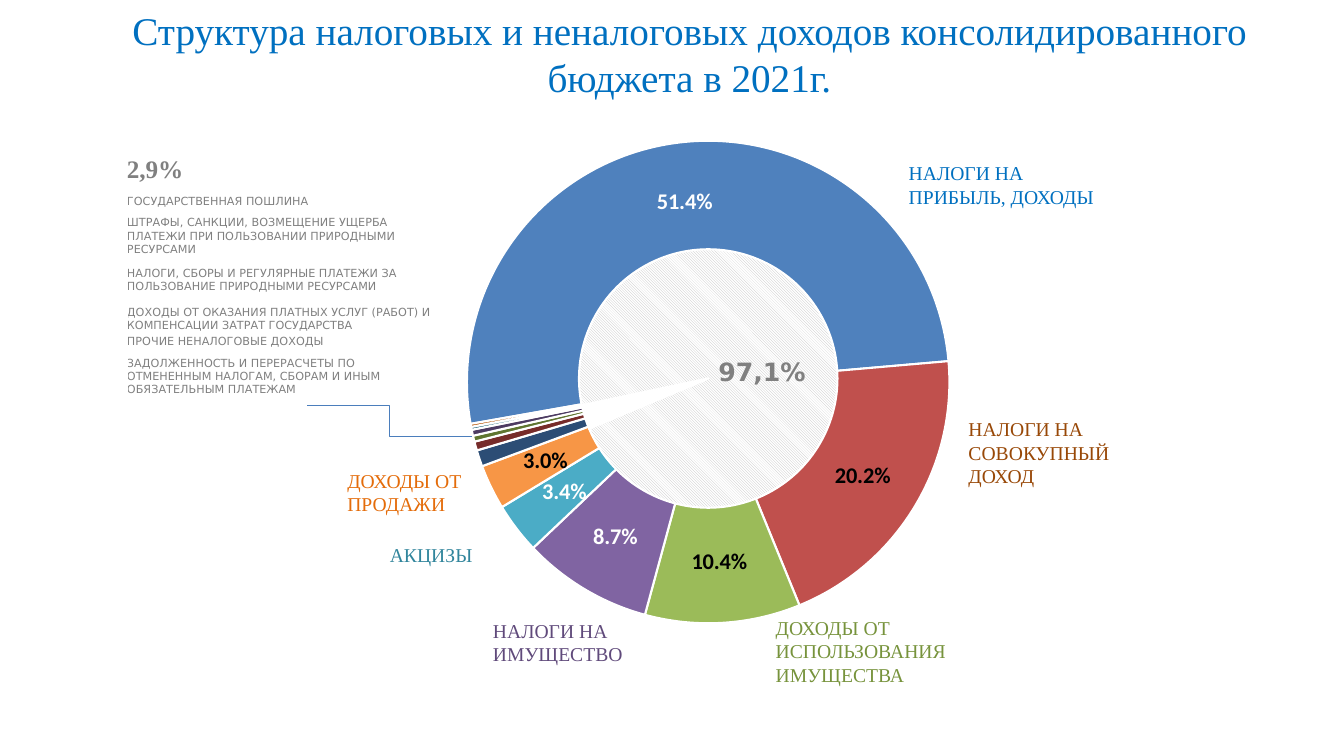
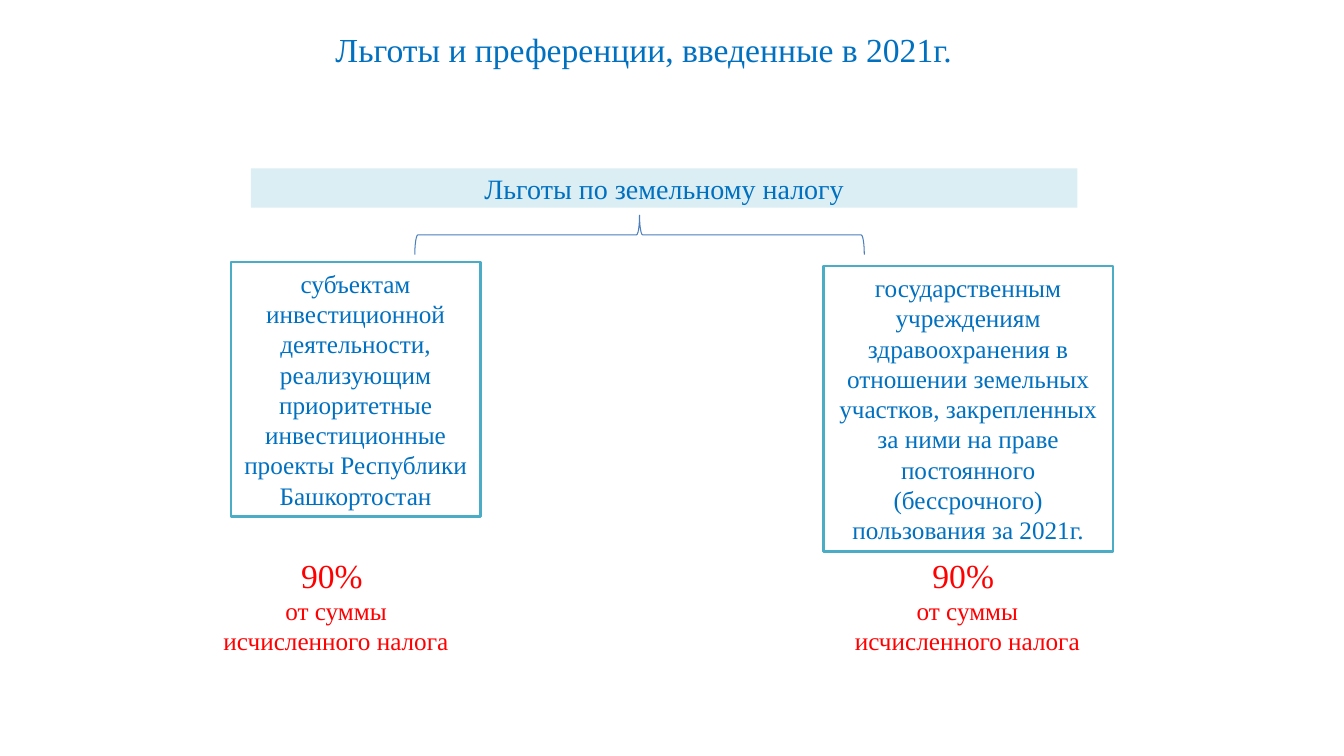
"""Build two slides on 2021 budget revenue and land tax relief."""
from pptx import Presentation
from pptx.chart.data import CategoryChartData
from pptx.dml.color import RGBColor
from pptx.enum.chart import XL_CHART_TYPE
from pptx.enum.dml import MSO_PATTERN
from pptx.enum.shapes import MSO_CONNECTOR, MSO_SHAPE
from pptx.enum.text import MSO_ANCHOR, MSO_AUTO_SIZE, PP_ALIGN
from pptx.oxml import parse_xml
from pptx.oxml.ns import nsdecls
from pptx.oxml.xmlchemy import OxmlElement
from pptx.util import Pt

LEFT, CENTER = PP_ALIGN.LEFT, PP_ALIGN.CENTER
TOP, MIDDLE, BOTTOM = MSO_ANCHOR.TOP, MSO_ANCHOR.MIDDLE, MSO_ANCHOR.BOTTOM
NO_AUTOFIT = MSO_AUTO_SIZE.NONE
DOUGHNUT, PIE = XL_CHART_TYPE.DOUGHNUT, XL_CHART_TYPE.PIE
RECT, BRACE = MSO_SHAPE.RECTANGLE, MSO_SHAPE.RIGHT_BRACE
ELBOW = MSO_CONNECTOR.ELBOW
HATCH = MSO_PATTERN.DARK_DOWNWARD_DIAGONAL

SERIF, SANS, CHART_FONT = "Times New Roman", "DejaVu Sans", "Calibri"
BLUE = RGBColor(0x00, 0x70, 0xC0)
LINE_BLUE = RGBColor(0x4B, 0x7E, 0xBC)
TEAL = RGBColor(0x4B, 0xAC, 0xC6)
PALE = RGBColor(0xDB, 0xEE, 0xF4)
RED = RGBColor(0xFF, 0x00, 0x00)
GREY = RGBColor(0x80, 0x80, 0x80)
SILVER = RGBColor(0xBF, 0xBF, 0xBF)
WHITE = RGBColor(0xFF, 0xFF, 0xFF)
BLACK = RGBColor(0x00, 0x00, 0x00)
BROWN = RGBColor(0x98, 0x48, 0x07)
GREEN = RGBColor(0x77, 0x93, 0x3C)
PURPLE = RGBColor(0x60, 0x4A, 0x7B)
DARK_TEAL = RGBColor(0x31, 0x85, 0x9C)
ORANGE = RGBColor(0xE4, 0x6C, 0x0A)

REVENUE_TITLE = "Структура налоговых и неналоговых доходов консолидированного бюджета в 2021г."
SHARES = [51.4, 20.2, 10.4, 8.7, 3.4, 3, 1.1, 0.6, 0.4, 0.4, 0.2, 0.2, 0]
SLICE_COLORS = [RGBColor.from_string(c) for c in (
    "4F81BD", "C0504D", "9BBB59", "8064A2", "4BACC6", "F79646", "2C4D75",
    "772C2A", "5F7530", "4D3B62", "276A7C", "B65708", "729ACA")]
WHITE_LABELS = (0, 3, 4)
MIN_LABELLED = 3
SLICE_NAMES = [
    ("НАЛОГИ НА ПРИБЫЛЬ, ДОХОДЫ", BLUE, (642, 111.6, 166, 41)),
    ("НАЛОГИ НА СОВОКУПНЫЙ ДОХОД", BROWN, (684.7, 294.5, 124, 58)),
    ("ДОХОДЫ ОТ ИСПОЛЬЗОВАНИЯ ИМУЩЕСТВА", GREEN, (547, 436.3, 148, 58)),
    ("НАЛОГИ НА ИМУЩЕСТВО", PURPLE, (345, 438.5, 148, 41)),
    ("АКЦИЗЫ", DARK_TEAL, (271.4, 384.5, 78, 24)),
    ("ДОХОДЫ ОТ ПРОДАЖИ", ORANGE, (241, 331.2, 148, 41)),
]
SMALL_ITEMS = [
    ("ГОСУДАРСТВЕННАЯ ПОШЛИНА", 9.4),
    ("ШТРАФЫ, САНКЦИИ, ВОЗМЕЩЕНИЕ УЩЕРБА", 15.1),
    ("ПЛАТЕЖИ ПРИ ПОЛЬЗОВАНИИ ПРИРОДНЫМИ РЕСУРСАМИ", 15.1),
    ("НАЛОГИ, СБОРЫ И РЕГУЛЯРНЫЕ ПЛАТЕЖИ ЗА ПОЛЬЗОВАНИЕ ПРИРОДНЫМИ РЕСУРСАМИ", 26.6),
    ("ДОХОДЫ ОТ ОКАЗАНИЯ ПЛАТНЫХ УСЛУГ (РАБОТ) И КОМПЕНСАЦИИ ЗАТРАТ ГОСУДАРСТВА", 28.1),
    ("ПРОЧИЕ НЕНАЛОГОВЫЕ ДОХОДЫ", 11.5),
    ("ЗАДОЛЖЕННОСТЬ И ПЕРЕРАСЧЕТЫ ПО ОТМЕНЕННЫМ НАЛОГАМ, СБОРАМ И ИНЫМ "
     "ОБЯЗАТЕЛЬНЫМ ПЛАТЕЖАМ", 33.8),
]

RELIEF_TITLE = "Льготы и преференции, введенные в 2021г."
RELIEF_BAND = "Льготы по земельному налогу"
RECIPIENTS = [
    ("субъектам инвестиционной деятельности, реализующим приоритетные "
     "инвестиционные проекты Республики Башкортостан", (165, 187.2, 178, 181.5), 151),
    ("государственным учреждениям здравоохранения в отношении земельных участков, "
     "закрепленных за ними на праве постоянного (бессрочного) пользования за 2021г.",
     (588, 190, 207, 203.8), 602),
]
RELIEF_RATE = [("90% ", 24), ("от суммы исчисленного налога", 18)]


def points(box):
    return [Pt(v) for v in box]


def fill_text(tf, lines, color, align=LEFT, anchor=TOP, font=SERIF, bold=False):
    tf.word_wrap = True
    tf.vertical_anchor = anchor
    tf.text = "\n".join(text for text, size in lines)
    for p, (text, size) in zip(tf.paragraphs, lines):
        p.alignment = align
        f = p.runs[0].font
        f.name, f.size, f.bold = font, Pt(size), bold
        f.color.rgb = color


def add_text(s, box, lines, color, **style):
    fill_text(s.shapes.add_textbox(*points(box)).text_frame, lines, color, **style)


def add_slide(prs, title, box, size, align):
    s = prs.slides.add_slide(prs.slide_layouts[5])
    sp = s.shapes.title
    sp.left, sp.top, sp.width, sp.height = points(box)
    tf = sp.text_frame
    tf.auto_size = NO_AUTOFIT
    tf.margin_left = tf.margin_right = Pt(8.64)
    tf.margin_top = tf.margin_bottom = Pt(4.32)
    fill_text(tf, [(title, size)], BLUE, align, MIDDLE)
    return s


def add_rect(s, box, text, size, fill, line=None):
    sp = s.shapes.add_shape(RECT, *points(box))
    sp.shadow.inherit = False
    sp.fill.solid()
    sp.fill.fore_color.rgb = fill
    if line is None:
        sp.line.fill.background()
    else:
        sp.line.color.rgb = line
        sp.line.width = Pt(2)
    fill_text(sp.text_frame, [(text, size)], BLUE, CENTER, MIDDLE)


def chart_value(parent, tag, value):
    for old in parent.xpath(tag):
        parent.remove(old)
    el = OxmlElement(tag)
    el.set("val", str(value))
    parent.append(el)


def add_round_chart(s, kind, box, values, angle, layout):
    data = CategoryChartData()
    data.categories = [str(i + 1) for i in range(len(values))]
    data.add_series("Series 1", values)
    chart = s.shapes.add_chart(kind, *points(box), data).chart
    chart.has_legend = chart.has_title = False
    chart.font.name, chart.font.size = CHART_FONT, Pt(10)
    chart.font.color.rgb = BLACK
    chart.plots[0].vary_by_categories = True
    area = chart.element.xpath(".//c:plotArea")[0]
    for old in area.xpath("c:layout"):
        area.remove(old)
    sizes = "".join(f'<c:{k} val="{v}"/>' for k, v in zip("xywh", layout))
    area.insert(0, parse_xml(
        f'<c:layout {nsdecls("c")}><c:manualLayout><c:layoutTarget val="inner"/>'
        f'<c:xMode val="edge"/><c:yMode val="edge"/>{sizes}</c:manualLayout></c:layout>'))
    ring = area.xpath("c:doughnutChart | c:pieChart")[0]
    chart_value(ring, "c:firstSliceAng", angle)
    if kind == DOUGHNUT:
        chart_value(ring, "c:holeSize", 55)
    for i in range(len(values)):
        line = chart.plots[0].series[0].points[i].format.line
        line.color.rgb = WHITE
        line.width = Pt(1.5)
    return chart


def label_font(font, color):
    font.name, font.size, font.bold = CHART_FONT, Pt(16), True
    font.color.rgb = color


def add_share_labels(chart):
    series = chart.plots[0].series[0]
    labels = series.data_labels
    labels.show_percentage, labels.show_value = True, False
    labels.number_format, labels.number_format_is_linked = "0.0%", False
    label_font(labels.font, BLACK)
    for i, color in enumerate(SLICE_COLORS):
        point = series.points[i]
        point.format.fill.solid()
        point.format.fill.fore_color.rgb = color
        label_font(point.data_label.font, WHITE if i in WHITE_LABELS else BLACK)
    for label, share in zip(chart.element.xpath(".//c:ser//c:dLbl"), SHARES):
        label.xpath("c:idx")[0].addnext(parse_xml(
            f'<c:numFmt {nsdecls("c")} formatCode="0.0%" sourceLinked="0"/>'))
        label.xpath("c:showVal")[0].set("val", "0")
        label.xpath("c:showPercent")[0].set("val", str(int(share >= MIN_LABELLED)))


def add_small_items(s):
    height = sum(h for text, h in SMALL_ITEMS)
    table = s.shapes.add_table(len(SMALL_ITEMS), 1, *points((90.7, 139, 224.6, height))).table
    table.first_row = table.horz_banding = False
    for row, (text, h) in zip(table.rows, SMALL_ITEMS):
        row.height = Pt(h)
        cell = row.cells[0]
        cell.margin_left = cell.margin_right = cell.margin_top = cell.margin_bottom = 0
        cell.fill.background()
        fill_text(cell.text_frame, [(text, 8)], GREY, font=SANS)
        cell.vertical_anchor = BOTTOM
        props = cell._tc.get_or_add_tcPr()
        for i, side in enumerate("LRTB"):
            props.insert(i, parse_xml(
                f'<a:ln{side} {nsdecls("a")} w="12700"><a:solidFill>'
                f'<a:srgbClr val="{WHITE}"/></a:solidFill></a:ln{side}>'))


def build_revenue(prs):
    s = add_slide(prs, REVENUE_TITLE, (60.5, -7.2, 864, 90), 28, CENTER)
    ring = add_round_chart(s, DOUGHNUT, (291.6, 77, 465.8, 404), SHARES, 260,
                           (0.09, 0.03, 0.74, 0.91))
    add_share_labels(ring)
    for text, color, box in SLICE_NAMES:
        add_text(s, box, [(text, 14)], color)
    core = add_round_chart(s, PIE, (345, 167.8, 321.8, 205.2), [97, 3], 258,
                           (0.21, 0.05, 0.58, 0.9))
    main, rest = (core.plots[0].series[0].points[i].format.fill for i in range(2))
    main.patterned()
    main.pattern = HATCH
    main.fore_color.rgb, main.back_color.rgb = SILVER, WHITE
    rest.solid()
    rest.fore_color.rgb = WHITE
    add_small_items(s)
    add_text(s, (83.5, 105.8, 67, 29), [("2,9%", 18)], GREY, bold=True)
    link = s.shapes.add_connector(ELBOW, *points((219.6, 289.4, 337, 312)))
    link.line.color.rgb = LINE_BLUE
    link.line.width = Pt(0.75)
    link._element.spPr.append(OxmlElement("a:effectLst"))
    add_text(s, (506, 251.3, 120, 29), [("97,1%", 18)], GREY, font=SANS, bold=True)


def build_relief(prs):
    s = add_slide(prs, RELIEF_TITLE, (231, 17.3, 664, 36), 24, LEFT)
    add_rect(s, (179.3, 120.2, 590.4, 28.1), RELIEF_BAND, 20, PALE)
    brace = s.shapes.add_shape(BRACE, *points((442.8, 7.2, 28.1, 321.1)))
    brace.rotation = 270
    brace.adjustments[0], brace.adjustments[1] = 0.08, 0.5
    brace.shadow.inherit = False
    brace.fill.background()
    brace.line.color.rgb = LINE_BLUE
    brace.line.width = Pt(0.75)
    for text, box, rate_left in RECIPIENTS:
        add_rect(s, box, text, 18, WHITE, TEAL)
        add_text(s, (rate_left, 393, 178, 80), RELIEF_RATE, RED, align=CENTER)


def main():
    prs = Presentation()
    prs.slide_width, prs.slide_height = Pt(960), Pt(540)
    build_revenue(prs)
    build_relief(prs)
    prs.save("out.pptx")


if __name__ == "__main__":
    main()
